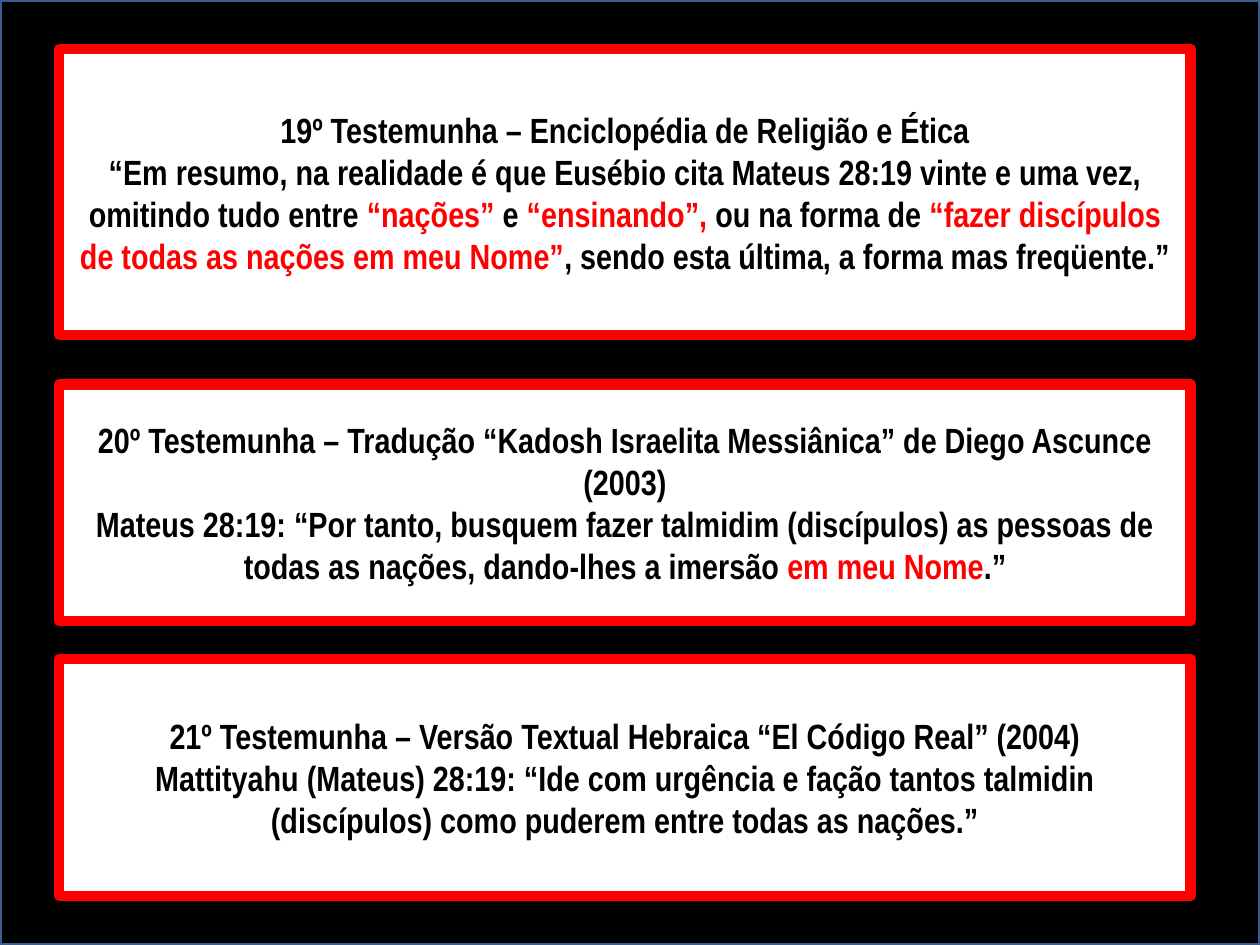
from pptx import Presentation
from pptx.dml.color import RGBColor
from pptx.enum.shapes import MSO_SHAPE
from pptx.enum.text import MSO_ANCHOR, PP_ALIGN
from pptx.util import Inches, Pt

RECTANGLE = MSO_SHAPE.RECTANGLE
MIDDLE = MSO_ANCHOR.MIDDLE
CENTER = PP_ALIGN.CENTER
BLACK, WHITE, RED, BLUE = "000000", "FFFFFF", "FF0000", "3A5F8C"


def color(hex_string):
    return RGBColor.from_string(hex_string)


def add_panel(left, top, width, height, fill, border, border_width):
    panel = slide.shapes.add_shape(
        RECTANGLE, Inches(left), Inches(top), Inches(width), Inches(height))
    panel.shadow.inherit = False
    panel.fill.solid()
    panel.fill.fore_color.rgb = color(fill)
    panel.line.color.rgb = color(border)
    panel.line.width = Pt(border_width)
    return panel


# Each testimony: top, height, paragraphs made of (text, colour) runs
testimonies = [
    (0.39, 2.27, [
        [("19º Testemunha – Enciclopédia de Religião e Ética", BLACK)],
        [("“Em resumo, na realidade é que Eusébio cita Mateus 28:19 vinte e "
          "uma vez, omitindo tudo entre ", BLACK),
         ("“nações” ", RED),
         ("e ", BLACK),
         ("“ensinando”, ", RED),
         ("ou na forma de ", BLACK),
         ("“fazer discípulos de todas as nações em meu Nome”", RED),
         (", sendo esta última, a forma mas freqüente.”", BLACK)],
    ]),
    (3.05, 1.88, [
        [("20º Testemunha – Tradução “Kadosh Israelita Messiânica” de Diego "
          "Ascunce (2003)", BLACK)],
        [("Mateus 28:19: “Por tanto, busquem fazer talmidim (discípulos) as "
          "pessoas de todas as nações, dando-lhes a imersão ", BLACK),
         ("em meu Nome", RED),
         (".”", BLACK)],
    ]),
    (5.23, 1.88, [
        [("21º Testemunha – Versão Textual Hebraica “El Código Real” (2004)",
          BLACK)],
        [("Mattityahu (Mateus) 28:19: “Ide com urgência e fação tantos "
          "talmidin (discípulos) como puderem entre todas as nações.”",
          BLACK)],
    ]),
]

prs = Presentation()
prs.slide_width = Inches(10)
prs.slide_height = Inches(7.5)
slide = prs.slides.add_slide(prs.slide_layouts[6])

add_panel(0, 0, 10, 7.5, BLACK, BLUE, 2)

for top, height, paragraphs in testimonies:
    frame = add_panel(0.47, top, 8.98, height, WHITE, RED, 6).text_frame
    frame.word_wrap = True
    frame.vertical_anchor = MIDDLE
    for index, runs in enumerate(paragraphs):
        paragraph = frame.add_paragraph() if index else frame.paragraphs[0]
        paragraph.alignment = CENTER
        for text, text_color in runs:
            run = paragraph.add_run()
            run.text = text
            run.font.name = "Arial Narrow"
            run.font.size = Pt(20)
            run.font.bold = True
            run.font.color.rgb = color(text_color)

prs.save("out.pptx")
